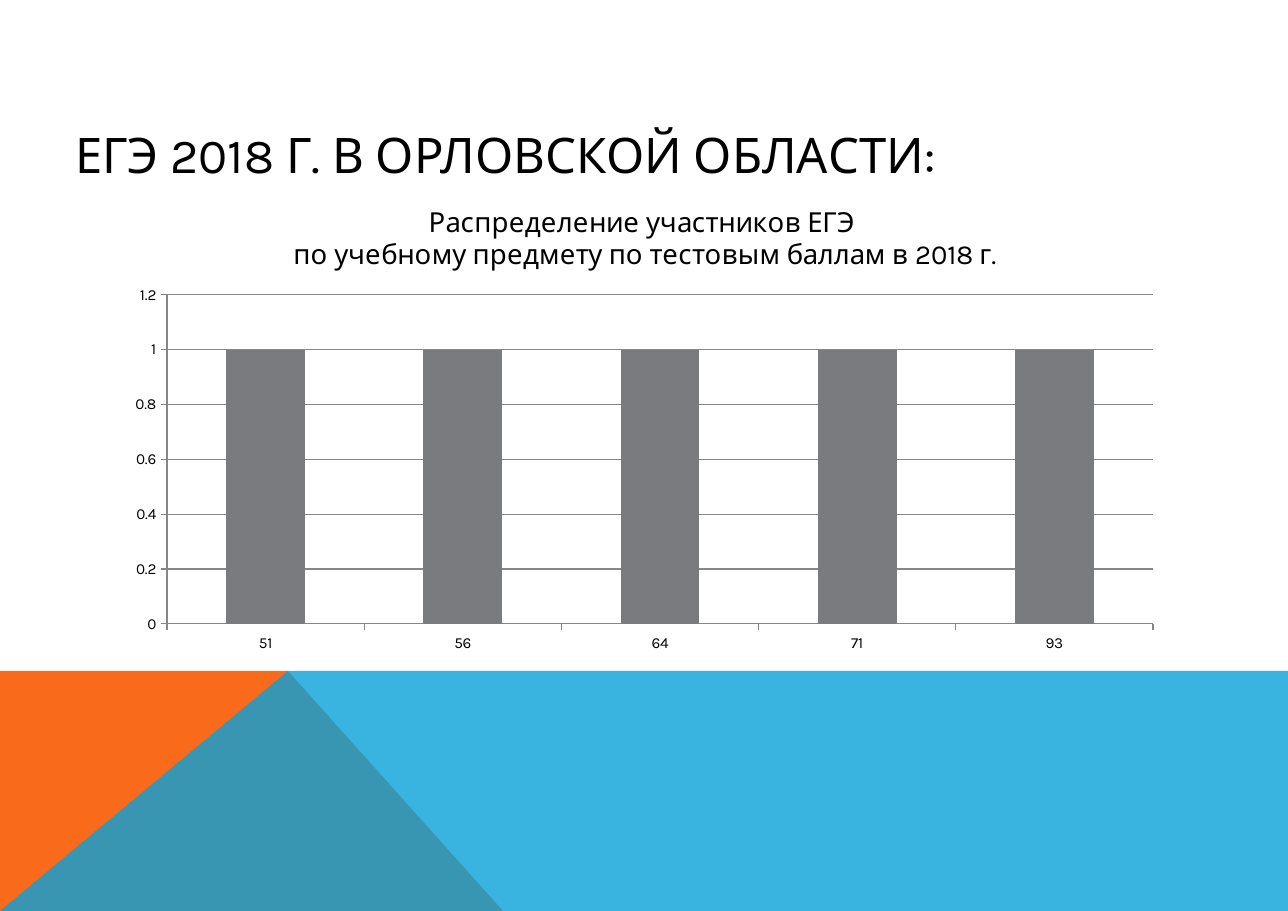
from lxml import etree
from pptx import Presentation
from pptx.chart.data import CategoryChartData
from pptx.dml.color import RGBColor
from pptx.enum.chart import XL_CHART_TYPE, XL_TICK_MARK
from pptx.enum.text import MSO_ANCHOR, PP_ALIGN
from pptx.oxml.ns import qn
from pptx.util import Emu, Pt

COLUMNS = XL_CHART_TYPE.COLUMN_CLUSTERED
TICK_OUTSIDE, TICK_NONE = XL_TICK_MARK.OUTSIDE, XL_TICK_MARK.NONE
MIDDLE = MSO_ANCHOR.MIDDLE
LEFT, CENTER = PP_ALIGN.LEFT, PP_ALIGN.CENTER

BLACK = RGBColor(0x00, 0x00, 0x00)
ORANGE = RGBColor(0xF9, 0x6A, 0x1B)
BLUE = RGBColor(0x08, 0xA1, 0xD9)
BAR_GRAY = RGBColor(0x79, 0x7B, 0x7E)
AXIS_GRAY = RGBColor(0x86, 0x86, 0x86)

FONT = "Karla"
PX_PER_INCH = 110.2
WIDTH, HEIGHT = 1288, 911
BAND_TOP, PEAK_X, ORANGE_RIGHT = 671, 288, 503


def px(length):
    return Emu(round(length * 914400 / PX_PER_INCH))


def apply(target, values):
    for name, value in values.items():
        setattr(target, name, value)


class SlidePainter:
    def __init__(self, slide, font):
        self.slide = slide
        self.font = font

    def style_font(self, font, size):
        apply(font, {"name": self.font, "size": Pt(size), "bold": False})
        font.color.rgb = BLACK

    def polygon(self, points, color, opacity=100):
        start, *rest = [(px(x), px(y)) for x, y in points]
        builder = self.slide.shapes.build_freeform(*start)
        builder.add_line_segments(rest, close=True)
        shape = builder.convert_to_shape()
        shape.shadow.inherit = False
        shape.fill.solid()
        shape.fill.fore_color.rgb = color
        shape.line.fill.background()
        if opacity < 100:
            rgb = shape.fill._xPr.find(qn("a:solidFill"))[0]
            etree.SubElement(rgb, qn("a:alpha"), val=str(opacity * 1000))

    def text(self, box, words, size):
        frame = self.slide.shapes.add_textbox(*map(px, box)).text_frame
        apply(frame, {"word_wrap": True, "vertical_anchor": MIDDLE,
                      "margin_left": px(12), "margin_right": px(12),
                      "margin_top": px(6), "margin_bottom": px(6)})
        paragraph = frame.paragraphs[0]
        apply(paragraph, {"text": words, "alignment": LEFT})
        self.style_font(paragraph.runs[0].font, size)

    def column_chart(self, box, plot_box, title_lines, categories, values):
        data = CategoryChartData()
        data.categories = categories
        data.add_series("Series 1", values)
        chart = self.slide.shapes.add_chart(COLUMNS, *map(px, box), data).chart
        apply(chart, {"has_legend": False, "has_title": True})
        self.style_font(chart.font, 10)

        # Chart heading
        heading = chart.chart_title.text_frame
        for index, line in enumerate(title_lines):
            paragraph = heading.add_paragraph() if index else heading.paragraphs[0]
            apply(paragraph, {"text": line, "alignment": CENTER})
            self.style_font(paragraph.runs[0].font, 18)
        chart.chart_title.include_in_layout = False

        # Columns
        plot = chart.plots[0]
        apply(plot, {"gap_width": 150, "vary_by_categories": False})
        bars = plot.series[0].format.fill
        bars.solid()
        bars.fore_color.rgb = BAR_GRAY

        # Axes and grid
        scale = chart.value_axis
        apply(scale, {"minimum_scale": 0, "maximum_scale": 1.2,
                      "major_unit": 0.2, "has_major_gridlines": True})
        for axis in (chart.category_axis, scale):
            apply(axis, {"major_tick_mark": TICK_OUTSIDE,
                         "minor_tick_mark": TICK_NONE})
        for part in (chart.category_axis, scale, scale.major_gridlines):
            part.format.line.color.rgb = AXIS_GRAY
            part.format.line.width = Pt(0.75)
        self.place_plot(chart, box, plot_box)

    def place_plot(self, chart, box, plot_box):
        area = chart._chartSpace.chart.plotArea
        for old in area.findall(qn("c:layout")):
            area.remove(old)
        layout = etree.Element(qn("c:layout"))
        area.insert(0, layout)
        manual = etree.SubElement(layout, qn("c:manualLayout"))
        left, top, width, height = box
        x, y, w, h = plot_box
        settings = {"layoutTarget": "inner", "xMode": "edge", "yMode": "edge",
                    "x": (x - left) / width, "y": (y - top) / height,
                    "w": w / width, "h": h / height}
        for tag, value in settings.items():
            etree.SubElement(manual, qn("c:" + tag), val=str(value))


def main():
    deck = Presentation()
    apply(deck, {"slide_width": px(WIDTH), "slide_height": px(HEIGHT)})
    painter = SlidePainter(deck.slides.add_slide(deck.slide_layouts[6]), FONT)

    # Coloured band at the bottom
    painter.polygon([(0, HEIGHT), (0, BAND_TOP), (PEAK_X, BAND_TOP),
                     (ORANGE_RIGHT, HEIGHT)], ORANGE)
    painter.polygon([(0, HEIGHT), (PEAK_X, BAND_TOP), (WIDTH, BAND_TOP),
                     (WIDTH, HEIGHT)], BLUE, opacity=80)

    # Title
    painter.text((63, 83, 1160, 142), "ЕГЭ 2018 Г. В ОРЛОВСКОЙ ОБЛАСТИ:", 32)

    # Distribution of test scores
    scores = ["51", "56", "64", "71", "93"]
    painter.column_chart(
        (115, 186, 1060, 476), (167, 295, 986, 329),
        ["Распределение участников ЕГЭ ",
         "по учебному предмету по тестовым баллам в 2018 г."],
        scores, [1] * len(scores))

    deck.save("out.pptx")


if __name__ == "__main__":
    main()
